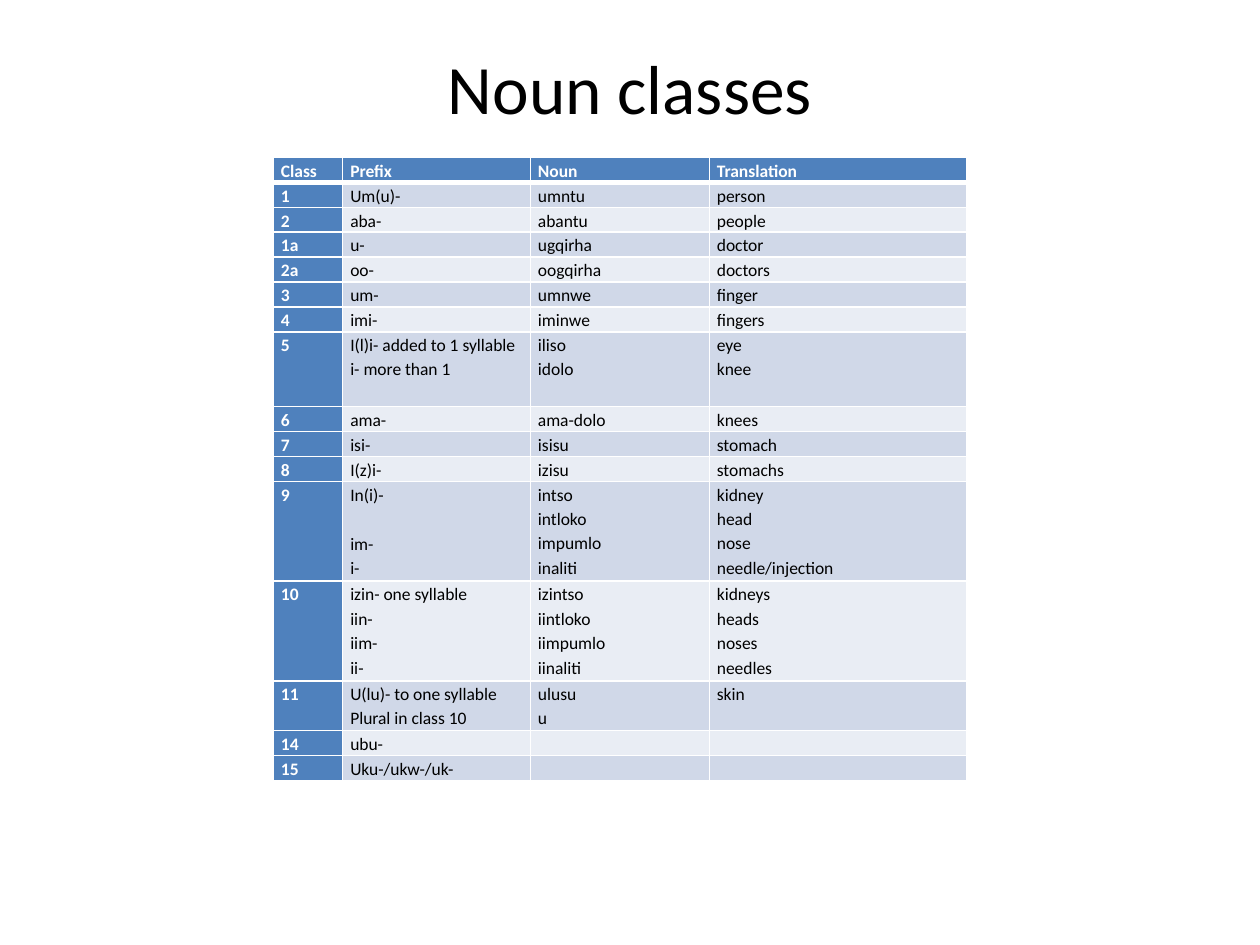
from dataclasses import dataclass

from lxml.etree import SubElement
from pptx import Presentation
from pptx.dml.color import RGBColor as RGB
from pptx.enum.text import MSO_ANCHOR as Anchor, PP_ALIGN as Align
from pptx.oxml.ns import qn
from pptx.util import Inches, Pt


@dataclass(frozen=True)
class Theme:
    font: str = "Calibri"
    title_size: float = 39.6
    cell_size: float = 10
    line_spacing: float = 1.15
    text: str = "000000"
    light: str = "FFFFFF"
    accent: str = "4F81BD"
    bands: tuple[str, str] = ("D0D8E8", "E9EDF4")
    rule: float = 1
    header_rule: float = 3


@dataclass(frozen=True)
class NounClass:
    """One table row; a line break starts a new paragraph, an empty line leaves a gap."""
    name: str
    prefix: str
    noun: str = ""
    translation: str = ""
    lines: int = 1

    @property
    def texts(self) -> tuple[str, ...]:
        return self.name, self.prefix, self.noun, self.translation


THEME = Theme()
LINE_HEIGHT = 0.198
COLUMN_WIDTHS = (0.55, 1.49, 1.42, 2.04)
ROWS = (
    NounClass("Class", "Prefix", "Noun", "Translation"),
    NounClass("1", "Um(u)-", "umntu", "person"),
    NounClass("2", "aba-", "abantu", "people"),
    NounClass("1a", "u-", "ugqirha", "doctor"),
    NounClass("2a", "oo-", "oogqirha", "doctors"),
    NounClass("3", "um-", "umnwe", "finger"),
    NounClass("4", "imi-", "iminwe", "fingers"),
    NounClass("5", "I(l)i- added to 1 syllable\ni- more than 1",
              "iliso\nidolo", "eye\nknee", lines=3),
    NounClass("6", "ama-", "ama-dolo", "knees"),
    NounClass("7", "isi-", "isisu", "stomach"),
    NounClass("8", "I(z)i-", "izisu", "stomachs"),
    NounClass("9", "In(i)-\n\nim-\ni-", "intso\nintloko\nimpumlo\ninaliti",
              "kidney\nhead\nnose\nneedle/injection", lines=4),
    NounClass("10", "izin- one syllable\niin-\niim-\nii-",
              "izintso\niintloko\niimpumlo\niinaliti",
              "kidneys\nheads\nnoses\nneedles", lines=4),
    NounClass("11", "U(lu)- to one syllable\nPlural in class 10", "ulusu\nu", "skin", lines=2),
    NounClass("14", "ubu-"),
    NounClass("15", "Uku-/ukw-/uk-"),
)


def format_run(r, size: float, color: str, bold: bool = False) -> None:
    for name, value in {"name": THEME.font, "size": Pt(size), "bold": bold}.items():
        setattr(r.font, name, value)
    r.font.color.rgb = RGB.from_string(color)


def add_title(slide, text: str) -> None:
    sp = slide.shapes.title
    box = {"left": 0.5, "top": 0.3, "width": 9, "height": 0.78}
    for name, value in box.items():
        setattr(sp, name, Inches(value))
    tf = sp.text_frame
    tf.vertical_anchor = Anchor.MIDDLE
    p = tf.paragraphs[0]
    p.alignment = Align.CENTER
    r = p.add_run()
    r.text = text
    format_run(r, THEME.title_size, THEME.text)


def set_borders(cell, widths: dict[str, float]) -> None:
    tc_pr = cell._tc.get_or_add_tcPr()
    for side, width in widths.items():
        ln = SubElement(tc_pr, qn(f"a:ln{side}"), w=str(Pt(width)))
        fill = SubElement(ln, qn("a:solidFill"))
        SubElement(fill, qn("a:srgbClr"), val=THEME.light)


def write_lines(cell, text: str, color: str, bold: bool) -> None:
    tf = cell.text_frame
    p = tf.paragraphs[0]
    if not text:
        # Keeps the default 18 pt of an empty cell from stretching the row
        SubElement(p._p, qn("a:endParaRPr"), sz=str(int(THEME.cell_size * 100)))
    gap = 0
    for i, line in enumerate(text.split("\n")):
        if not line:
            gap += Inches(LINE_HEIGHT)
            continue
        p = tf.add_paragraph() if i else p
        p.line_spacing = THEME.line_spacing
        if gap:
            p.space_before, gap = gap, 0
        r = p.add_run()
        r.text = line
        format_run(r, THEME.cell_size, color, bold)


def fill_cell(cell, text: str, row: int, column: int) -> None:
    heading = row == 0 or column == 0
    set_borders(cell, {
        "L": THEME.rule,
        "R": THEME.rule,
        "T": THEME.header_rule if row == 1 else THEME.rule,
        "B": THEME.header_rule if row == 0 else THEME.rule,
    })
    cell.fill.solid()
    cell.fill.fore_color.rgb = RGB.from_string(
        THEME.accent if heading else THEME.bands[(row - 1) % 2])
    margins = {"left": 0.06, "right": 0.06, "top": 0, "bottom": 0}
    for side, value in margins.items():
        setattr(cell, f"margin_{side}", Inches(value))
    write_lines(cell, text, THEME.light if heading else THEME.text, heading)


def add_noun_table(slide, rows: tuple[NounClass, ...]) -> None:
    height = LINE_HEIGHT * sum(row.lines for row in rows)
    table = slide.shapes.add_table(
        len(rows), len(COLUMN_WIDTHS), Inches(2.17), Inches(1.25),
        Inches(sum(COLUMN_WIDTHS)), Inches(height)).table
    table.first_col = True
    for column, width in zip(table.columns, COLUMN_WIDTHS):
        column.width = Inches(width)
    for i, row in enumerate(rows):
        table.rows[i].height = Inches(LINE_HEIGHT * row.lines)
        for j, text in enumerate(row.texts):
            fill_cell(table.cell(i, j), text, i, j)


def main() -> None:
    prs = Presentation()
    prs.slide_width, prs.slide_height = Inches(10), Inches(7.5)
    slide = prs.slides.add_slide(prs.slide_layouts.get_by_name("Title Only"))
    add_title(slide, "Noun classes")
    add_noun_table(slide, ROWS)
    prs.save("out.pptx")


if __name__ == "__main__":
    main()
